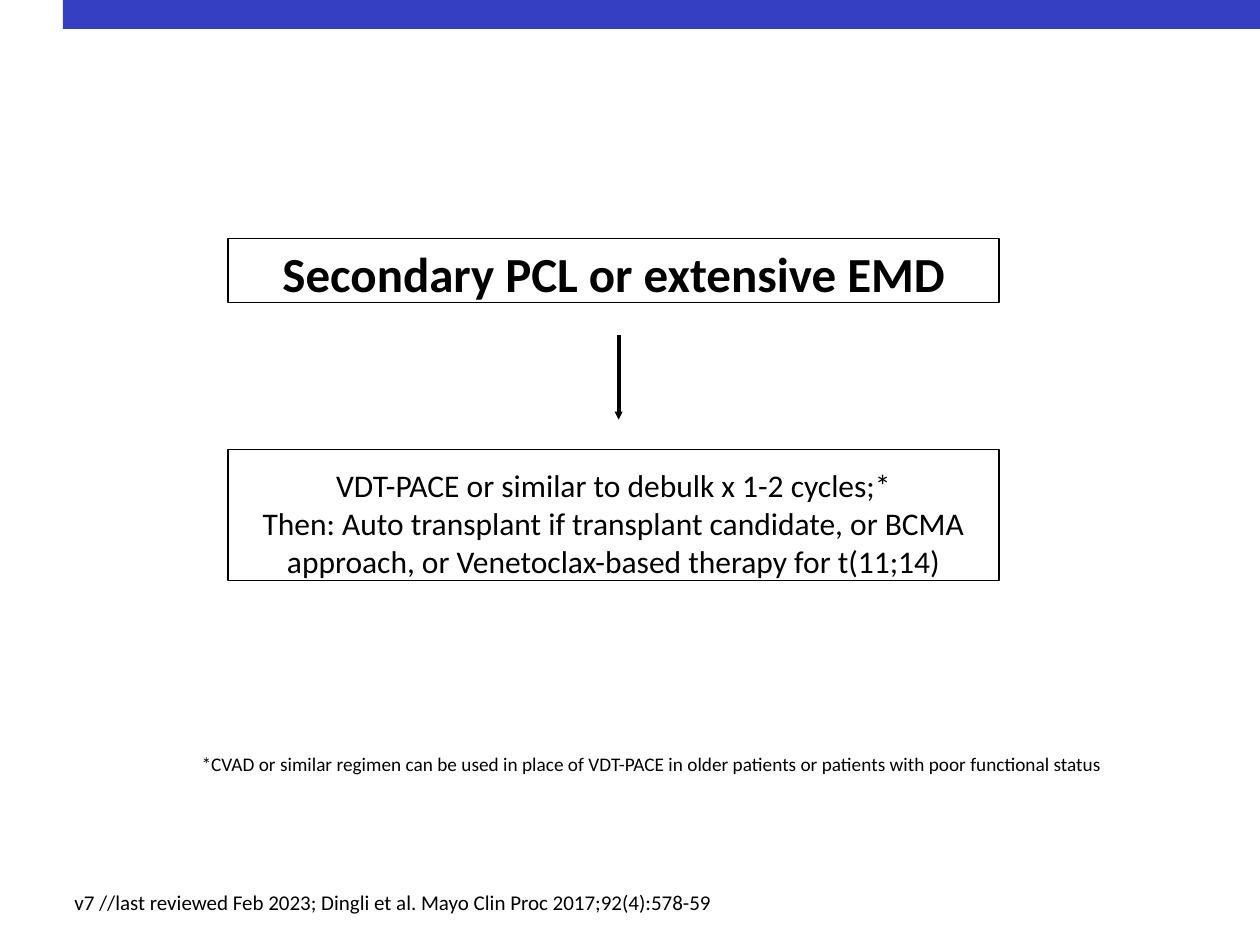
import pptx
import pptx.util
import pptx.dml.color
import pptx.enum.shapes
import pptx.enum.text
import pptx.oxml
import pptx.oxml.ns
from pptx.util import Inches

COLORS = {"bar": "343FC1", "ink": "000000"}
FONT = "Calibri"
BAR = (0.5, 0, 9.5, 0.23)
LEFT, WIDTH = 1.81, 6.12
BOXES = [
    {"top": 1.89, "high": 0.51, "inset": 0.04, "size": 28, "bold": True,
     "lines": ["Secondary PCL or extensive EMD"]},
    {"top": 3.57, "high": 1.04, "inset": 0.13, "size": 18, "bold": False,
     "lines": ["VDT-PACE or similar to debulk x 1-2 cycles;*",
               "Then: Auto transplant if transplant candidate, or BCMA "
               "approach, or Venetoclax-based therapy for t(11;14)"]},
]
ARROW = {"x": 4.91, "top": 2.66, "end": 3.33}
NOTES = [
    {"at": (1.6, 5.96, 7.23, 0.2), "inset": 0.01, "size": 11, "lead": None,
     "text": "*CVAD or similar regimen can be used in place of VDT-PACE "
             "in older patients or patients with poor functional status"},
    {"at": (0.59, 7.09, 5.17, 0.17), "inset": 0, "size": 12, "lead": 12.3,
     "text": "v7 //last reviewed Feb 2023; Dingli et al. "
             "Mayo Clin Proc 2017;92(4):578-59"},
]


def color(name):
    return pptx.dml.color.RGBColor.from_string(COLORS[name])


def add_rect(slide, place):
    kind = pptx.enum.shapes.MSO_SHAPE.RECTANGLE
    rect = slide.shapes.add_shape(kind, *map(Inches, place))
    rect.shadow.inherit = False
    return rect


def fill_text(shape, lines, size, inset, align, bold=False, lead=None):
    frame = shape.text_frame
    frame.word_wrap = True
    frame.vertical_anchor = pptx.enum.text.MSO_ANCHOR.TOP
    frame.margin_left = frame.margin_right = frame.margin_bottom = 0
    frame.margin_top = Inches(inset)
    frame.text = "\n".join(lines)
    for para in frame.paragraphs:
        para.alignment = align
        if lead:
            para.line_spacing = pptx.util.Pt(lead)
        para.font.name = FONT
        para.font.size = pptx.util.Pt(size)
        para.font.bold = bold
        para.font.color.rgb = color("ink")


def add_box(slide, box):
    rect = add_rect(slide, (LEFT, box["top"], WIDTH, box["high"]))
    rect.fill.background()
    rect.line.color.rgb = color("ink")
    rect.line.width = pptx.util.Pt(0.75)
    fill_text(rect, box["lines"], box["size"], box["inset"],
              pptx.enum.text.PP_ALIGN.CENTER, box["bold"])


def add_arrow(slide):
    x = Inches(ARROW["x"])
    arrow = slide.shapes.add_connector(
        pptx.enum.shapes.MSO_CONNECTOR.STRAIGHT,
        x, Inches(ARROW["top"]), x, Inches(ARROW["end"]))
    arrow.line.color.rgb = color("ink")
    arrow.line.width = pptx.util.Pt(2.25)
    space = pptx.oxml.ns.nsdecls("a")
    arrow.line._get_or_add_ln().append(pptx.oxml.parse_xml(
        f'<a:tailEnd {space} type="triangle" w="sm" len="sm"/>'))
    arrow._element.spPr.append(
        pptx.oxml.parse_xml(f"<a:effectLst {space}/>"))


def main():
    deck = pptx.Presentation()
    deck.slide_width, deck.slide_height = Inches(10), Inches(7.5)
    slide = deck.slides.add_slide(deck.slide_layouts[6])

    bar = add_rect(slide, BAR)
    bar.fill.solid()
    bar.fill.fore_color.rgb = color("bar")
    bar.line.fill.background()

    for box in BOXES:
        add_box(slide, box)
    add_arrow(slide)

    for note in NOTES:
        label = slide.shapes.add_textbox(*map(Inches, note["at"]))
        fill_text(label, [note["text"]], note["size"], note["inset"],
                  pptx.enum.text.PP_ALIGN.LEFT, lead=note["lead"])

    deck.save("out.pptx")


if __name__ == "__main__":
    main()
